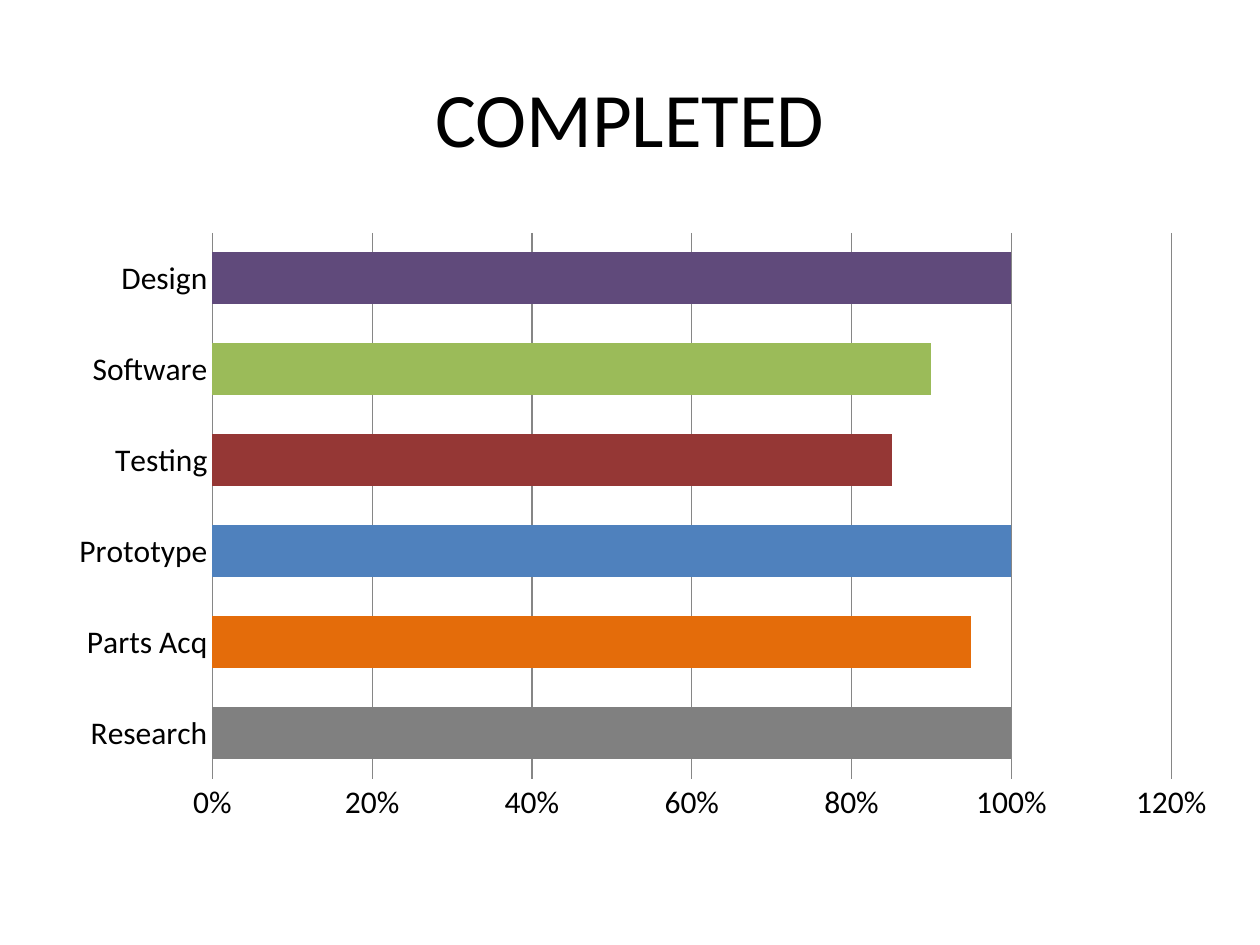
from lxml import etree
from pptx import Presentation
from pptx.chart.data import CategoryChartData
from pptx.dml.color import RGBColor
from pptx.enum.chart import XL_CHART_TYPE, XL_TICK_MARK
from pptx.enum.text import MSO_ANCHOR, PP_ALIGN
from pptx.oxml.ns import qn
from pptx.util import Inches, Pt

BAR, NO_TICK = XL_CHART_TYPE.BAR_CLUSTERED, XL_TICK_MARK.NONE
CENTER, MIDDLE = PP_ALIGN.CENTER, MSO_ANCHOR.MIDDLE

COLORS = {
    "text": "000000", "grid": "868686", "gray": "808080", "orange": "E46C0A",
    "blue": "4F81BD", "red": "953735", "green": "9BBB59", "purple": "604A7B",
}
TASKS = [
    ("Research", 1, "gray"),
    ("Parts Acq", 0.95, "orange"),
    ("Prototype", 1, "blue"),
    ("Testing", 0.85, "red"),
    ("Software", 0.9, "green"),
    ("Design", 1, "purple"),
]
PLOT = {"x": 0.19, "y": 0.035, "w": 0.755, "h": 0.853}
PLOT["x"] = 0.192


class Deck:
    """Holds the style and the current slide, and adds elements to it."""

    def __init__(self, prs, font="Calibri"):
        self.font = font
        self.slide = prs.slides.add_slide(prs.slide_layouts[6])

    def color(self, name):
        return RGBColor.from_string(COLORS[name])

    def style(self, font, size):
        for key, value in {"name": self.font, "size": Pt(size), "bold": False}.items():
            setattr(font, key, value)
        font.color.rgb = self.color("text")

    def title(self, text, box, size):
        tf = self.slide.shapes.add_textbox(*map(Inches, box)).text_frame
        for key, value in {"word_wrap": True, "vertical_anchor": MIDDLE}.items():
            setattr(tf, key, value)
        p = tf.paragraphs[0]
        p.alignment = CENTER
        r = p.add_run()
        r.text = text
        self.style(r.font, size)

    def line(self, fmt):
        fmt.line.color.rgb = self.color("grid")
        fmt.line.width = Pt(0.75)

    def bar_chart(self, rows, box, size):
        data = CategoryChartData(number_format="0%")
        data.categories = [name for name, _, _ in rows]
        data.add_series("Series 1", [value for _, value, _ in rows])
        chart = self.slide.shapes.add_chart(BAR, *map(Inches, box), data).chart
        for key, value in {"has_legend": False, "has_title": False}.items():
            setattr(chart, key, value)
        self.style(chart.font, size)
        plot = chart.plots[0]
        for key, value in {"gap_width": 75, "vary_by_categories": False}.items():
            setattr(plot, key, value)
        for i, (_, _, name) in enumerate(rows):
            fill = plot.series[0].points[i].format.fill
            fill.solid()
            fill.fore_color.rgb = self.color(name)
        self.axes(chart)
        self.plot_area(chart, PLOT)

    def axes(self, chart):
        cat, val = chart.category_axis, chart.value_axis
        for axis in (cat, val):
            axis.major_tick_mark = axis.minor_tick_mark = NO_TICK
        cat.has_major_gridlines = False
        self.line(cat.format)
        scale = {"minimum_scale": 0, "maximum_scale": 1.2, "major_unit": 0.2,
                 "has_major_gridlines": True}
        for key, value in scale.items():
            setattr(val, key, value)
        self.line(val.major_gridlines.format)
        val.format.line.fill.background()
        labels = {"number_format": "0%", "number_format_is_linked": False}
        for key, value in labels.items():
            setattr(val.tick_labels, key, value)

    def plot_area(self, chart, frame):
        area = chart.element.find(".//" + qn("c:plotArea"))
        layout = area.find(qn("c:layout"))
        if layout is None:
            layout = etree.Element(qn("c:layout"))
            area.insert(0, layout)
        manual = etree.SubElement(layout, qn("c:manualLayout"))
        values = {"layoutTarget": "inner", "xMode": "edge", "yMode": "edge", **frame}
        for tag, value in values.items():
            etree.SubElement(manual, qn("c:" + tag), val=str(value))


def main():
    prs = Presentation()
    prs.slide_width, prs.slide_height = Inches(10), Inches(7.5)
    deck = Deck(prs)
    deck.title("COMPLETED", (0.5, 0.3, 9, 1.25), 44)
    deck.bar_chart(TASKS, (-0.25, 1.67, 10.08, 5.08), 18)
    prs.save("out.pptx")


if __name__ == "__main__":
    main()
